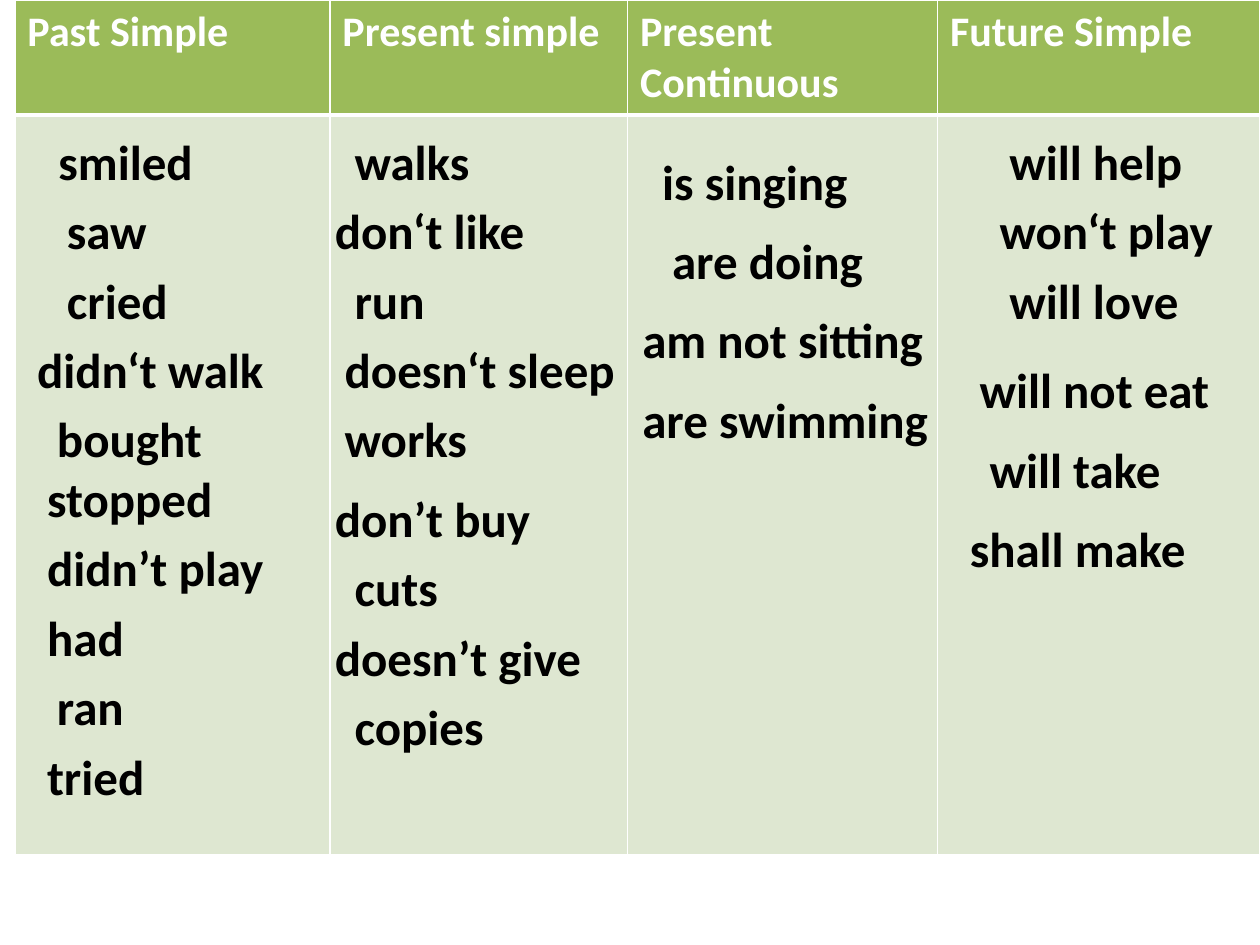
"""Build a slide that sorts verb forms into four English tenses."""
from dataclasses import dataclass

from lxml import etree
from pptx import Presentation
from pptx.dml.color import RGBColor
from pptx.enum.text import MSO_AUTO_SIZE
from pptx.oxml.ns import qn
from pptx.util import Cm, Pt

GROW = MSO_AUTO_SIZE.SHAPE_TO_FIT_TEXT


@dataclass(frozen=True)
class Theme:
    font: str = "Calibri"
    head: str = "9BBB59"
    body: str = "DEE7D1"
    white: str = "FFFFFF"
    black: str = "000000"
    head_size: int = 24
    word_size: int = 28
    thin: int = 1
    thick: int = 3


theme = Theme()


def style(frame, size, color):
    for run in frame.paragraphs[0].runs:
        run.font.name = theme.font
        run.font.size = Pt(size)
        run.font.bold = True
        run.font.color.rgb = RGBColor.from_string(color)


def edge(cell, side, width):
    line = etree.SubElement(cell._tc.get_or_add_tcPr(), qn("a:ln" + side), w=str(Pt(width)))
    fill = etree.SubElement(line, qn("a:solidFill"))
    etree.SubElement(fill, qn("a:srgbClr"), val=theme.white)


deck = Presentation()
deck.slide_width, deck.slide_height = Cm(25.4), Cm(19.05)
slide = deck.slides.add_slide(deck.slide_layouts[6])

heads = ["Past Simple", "Present simple", "Present Continuous", "Future Simple"]
widths = [6.35, 6, 6.25, 6.5]
heights = [2.31, 14.91]
grid = slide.shapes.add_table(
    2, 4, Cm(0.3), Cm(0), Cm(sum(widths)), Cm(sum(heights))
).table
for row, height in zip(grid.rows, heights):
    row.height = Cm(height)
for col, (head, width) in enumerate(zip(heads, widths)):
    grid.columns[col].width = Cm(width)
    top, low = grid.cell(0, col), grid.cell(1, col)
    for side in "LRT":
        edge(top, side, theme.thin)
    edge(top, "B", theme.thick)
    for side in "LRB":
        edge(low, side, theme.thin)
    for cell, color in ((top, theme.head), (low, theme.body)):
        cell.fill.solid()
        cell.fill.fore_color.rgb = RGBColor.from_string(color)
    top.text_frame.text = head
    style(top.text_frame, theme.head_size, theme.white)

groups = [
    (2.52, 1.4, [("smiled", 0.93, 3.4), ("saw", 1.1, 2.13), ("cried", 1.1, 2.57),
                 ("didn‘t walk", 0.5, 5.13), ("bought", 0.9, 3.45)]),
    (9.32, 1.4, [("stopped", 0.7, 3.89), ("didn’t play", 0.7, 4.93), ("had", 0.7, 2.08),
                 ("ran", 0.9, 1.88), ("tried", 0.7, 2.49)]),
    (2.52, 1.4, [("walks", 6.9, 2.84), ("don‘t like", 6.5, 4.37), ("run", 6.9, 1.93),
                 ("doesn‘t sleep", 6.7, 6.02), ("works", 6.7, 3)]),
    (9.72, 1.4, [("don’t buy", 6.5, 4.5), ("cuts", 6.9, 2.21),
                 ("doesn’t give", 6.5, 5.54), ("copies", 6.9, 3.15)]),
    (2.92, 1.6, [("is singing", 13.1, 4.29), ("are doing", 13.3, 4.39),
                 ("am not sitting", 12.7, 6.27), ("are swimming", 12.7, 6.32)]),
    (2.52, 1.4, [("will help", 20.1, 4.55), ("won‘t play", 19.9, 4.85),
                 ("will love", 20.1, 3.96)]),
    (7.13, 1.6, [("will not eat", 19.5, 5.21), ("will take", 19.7, 4.01),
                 ("shall make", 19.3, 4.93)]),
]
for start, step, words in groups:
    for place, (word, left, width) in enumerate(words):
        box = slide.shapes.add_textbox(
            Cm(left), Cm(start + place * step), Cm(width), Cm(1.45)
        )
        frame = box.text_frame
        frame.word_wrap = False
        frame.auto_size = GROW
        frame.text = word
        style(frame, theme.word_size, theme.black)

deck.save("out.pptx")
